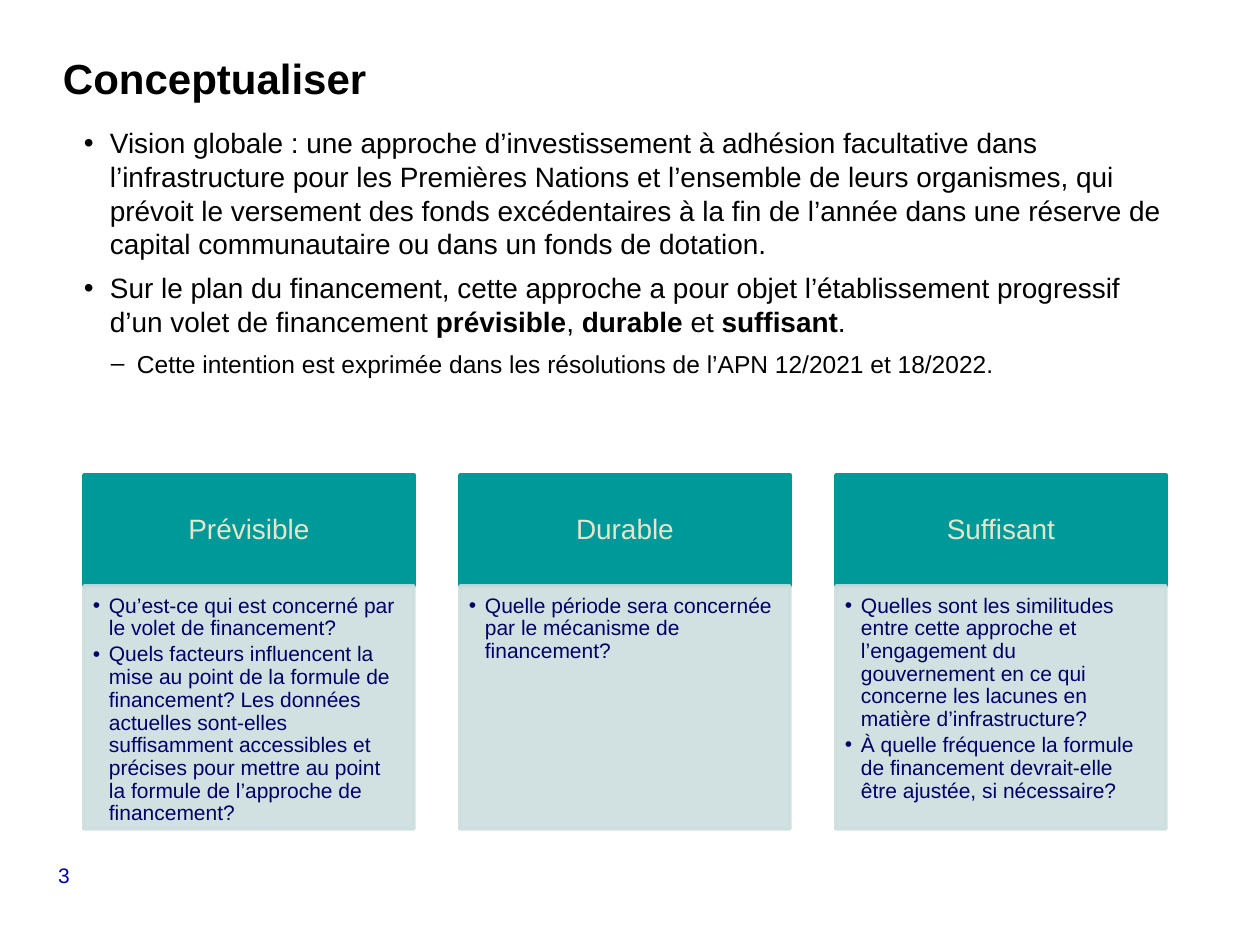
import dataclasses

import lxml.etree
import pptx
import pptx.dml.color
import pptx.enum.shapes
import pptx.enum.text
import pptx.oxml.ns
import pptx.util

EMU_PER_PX = 914400 / 126
ALIGN = pptx.enum.text.PP_ALIGN
ANCHOR = pptx.enum.text.MSO_ANCHOR


@dataclasses.dataclass(frozen=True)
class Theme:
    font: str = "Arial"
    ink: str = "000000"
    number: str = "0000A3"
    header_fill: str = "009999"
    header_text: str = "E5E5CC"
    card_fill: str = "CCDEDE"
    card_text: str = "000066"
    card_opacity: int = 90
    title_size: int = 24
    body_size: int = 16
    detail_size: int = 14
    small_size: int = 12


THEME = Theme()

VISION = [
    [("Vision globale : une approche d’investissement à adhésion facultative dans "
      "l’infrastructure pour les Premières Nations et l’ensemble de leurs organismes, "
      "qui prévoit le versement des fonds excédentaires à la fin de l’année dans une "
      "réserve de capital communautaire ou dans un fonds de dotation.", False)],
    [("Sur le plan du financement, cette approche a pour objet l’établissement "
      "progressif d’un volet de financement ", False),
     ("prévisible", True), (", ", False), ("durable", True),
     (" et ", False), ("suffisant", True), (".", False)],
]
INTENTION = "Cette intention est exprimée dans les résolutions de l’APN 12/2021 et 18/2022."

CARDS = [
    ("Prévisible", [
        "Qu’est-ce qui est concerné par le volet de financement?",
        "Quels facteurs influencent la mise au point de la formule de financement? "
        "Les données actuelles sont-elles suffisamment accessibles et précises pour "
        "mettre au point la formule de l’approche de financement?",
    ]),
    ("Durable", [
        "Quelle période sera concernée par le mécanisme de financement?",
    ]),
    ("Suffisant", [
        "Quelles sont les similitudes entre cette approche et l’engagement du "
        "gouvernement en ce qui concerne les lacunes en matière d’infrastructure?",
        "À quelle fréquence la formule de financement devrait-elle être ajustée, "
        "si nécessaire?",
    ]),
]
CARD_LEFT, CARD_PITCH, CARD_WIDTH = 84, 376, 330
HEADER_TOP, HEADER_HEIGHT, CARD_HEIGHT = 475, 111, 243


def px(value):
    return pptx.util.Emu(round(value * EMU_PER_PX))


def rgb(value):
    return pptx.dml.color.RGBColor.from_string(value)


def set_frame(text_frame, insets, anchor=ANCHOR.TOP):
    text_frame.word_wrap = True
    text_frame.vertical_anchor = anchor
    text_frame.margin_left, text_frame.margin_top, \
        text_frame.margin_right, text_frame.margin_bottom = map(px, insets)


def format_paragraph(paragraph, size, color, bold=False, align=ALIGN.LEFT,
                     line_spacing=None, space_after=0):
    paragraph.alignment = align
    paragraph.line_spacing = line_spacing
    paragraph.space_after = pptx.util.Pt(space_after)
    for run in paragraph.runs:
        run.font.name = THEME.font
        run.font.size = pptx.util.Pt(size)
        run.font.color.rgb = rgb(color)
        if run.font.bold is None:
            run.font.bold = bold


def add_bullet(paragraph, character, left, hanging):
    properties = paragraph._p.get_or_add_pPr()
    properties.set("marL", str(px(left)))
    properties.set("indent", str(-px(hanging)))
    for tag, name, value in (("a:buFont", "typeface", THEME.font),
                             ("a:buChar", "char", character)):
        element = lxml.etree.SubElement(properties, pptx.oxml.ns.qn(tag))
        element.set(name, value)


def next_paragraph(text_frame, index):
    return text_frame.add_paragraph() if index else text_frame.paragraphs[0]


def add_label(slide, text, box, insets, **style):
    text_frame = slide.shapes.add_textbox(*map(px, box)).text_frame
    set_frame(text_frame, insets)
    text_frame.text = text
    format_paragraph(text_frame.paragraphs[0], **style)


def add_vision(slide):
    text_frame = slide.shapes.add_textbox(px(84), px(126), px(1081), px(284)).text_frame
    set_frame(text_frame, (0, 0, 0, 0))
    for index, pieces in enumerate(VISION):
        paragraph = next_paragraph(text_frame, index)
        for text, bold in pieces:
            run = paragraph.add_run()
            run.text = text
            run.font.bold = bold
        format_paragraph(paragraph, THEME.body_size, THEME.ink, space_after=6)
        add_bullet(paragraph, "•", 26, 26)
    paragraph = text_frame.add_paragraph()
    paragraph.text = INTENTION
    paragraph.level = 1
    format_paragraph(paragraph, THEME.detail_size, THEME.ink, space_after=5)
    add_bullet(paragraph, "–", 53, 26)


def add_panel(slide, box, color, opacity=100):
    shape = slide.shapes.add_shape(pptx.enum.shapes.MSO_SHAPE.RECTANGLE, *map(px, box))
    shape.shadow.inherit = False
    shape.fill.solid()
    shape.fill.fore_color.rgb = rgb(color)
    shape.line.color.rgb = rgb(color)
    shape.line.width = pptx.util.Pt(2)
    if opacity < 100:
        for element in shape._element.spPr.iter(pptx.oxml.ns.qn("a:srgbClr")):
            alpha = lxml.etree.SubElement(element, pptx.oxml.ns.qn("a:alpha"))
            alpha.set("val", str(opacity * 1000))
    return shape


def add_card(slide, left, heading, questions):
    header = add_panel(slide, (left, HEADER_TOP, CARD_WIDTH, HEADER_HEIGHT),
                       THEME.header_fill)
    set_frame(header.text_frame, (15, 9, 15, 9), ANCHOR.MIDDLE)
    header.text_frame.text = heading
    format_paragraph(header.text_frame.paragraphs[0], THEME.body_size,
                     THEME.header_text, align=ALIGN.CENTER, line_spacing=0.9)

    card = add_panel(slide, (left, HEADER_TOP + HEADER_HEIGHT, CARD_WIDTH, CARD_HEIGHT),
                     THEME.card_fill, THEME.card_opacity)
    set_frame(card.text_frame, (9, 9, 11, 12))
    for index, question in enumerate(questions):
        paragraph = next_paragraph(card.text_frame, index)
        paragraph.text = question
        paragraph.level = 1
        format_paragraph(paragraph, THEME.small_size, THEME.card_text,
                         line_spacing=0.9, space_after=2)
        add_bullet(paragraph, "•", 16, 16)


def main():
    presentation = pptx.Presentation()
    presentation.slide_width = px(1260)
    presentation.slide_height = px(945)
    slide = presentation.slides.add_slide(presentation.slide_layouts[6])
    add_label(slide, "3", (5, 859, 118, 38), (12, 6, 12, 6), size=THEME.small_size,
              color=THEME.number, align=ALIGN.CENTER, line_spacing=0.9)
    add_label(slide, "Conceptualiser", (63, 53, 1081, 53), (0, 0, 0, 0),
              size=THEME.title_size, color=THEME.ink, bold=True)
    add_vision(slide)
    for index, (heading, questions) in enumerate(CARDS):
        add_card(slide, CARD_LEFT + index * CARD_PITCH, heading, questions)
    presentation.save("out.pptx")


if __name__ == "__main__":
    main()
